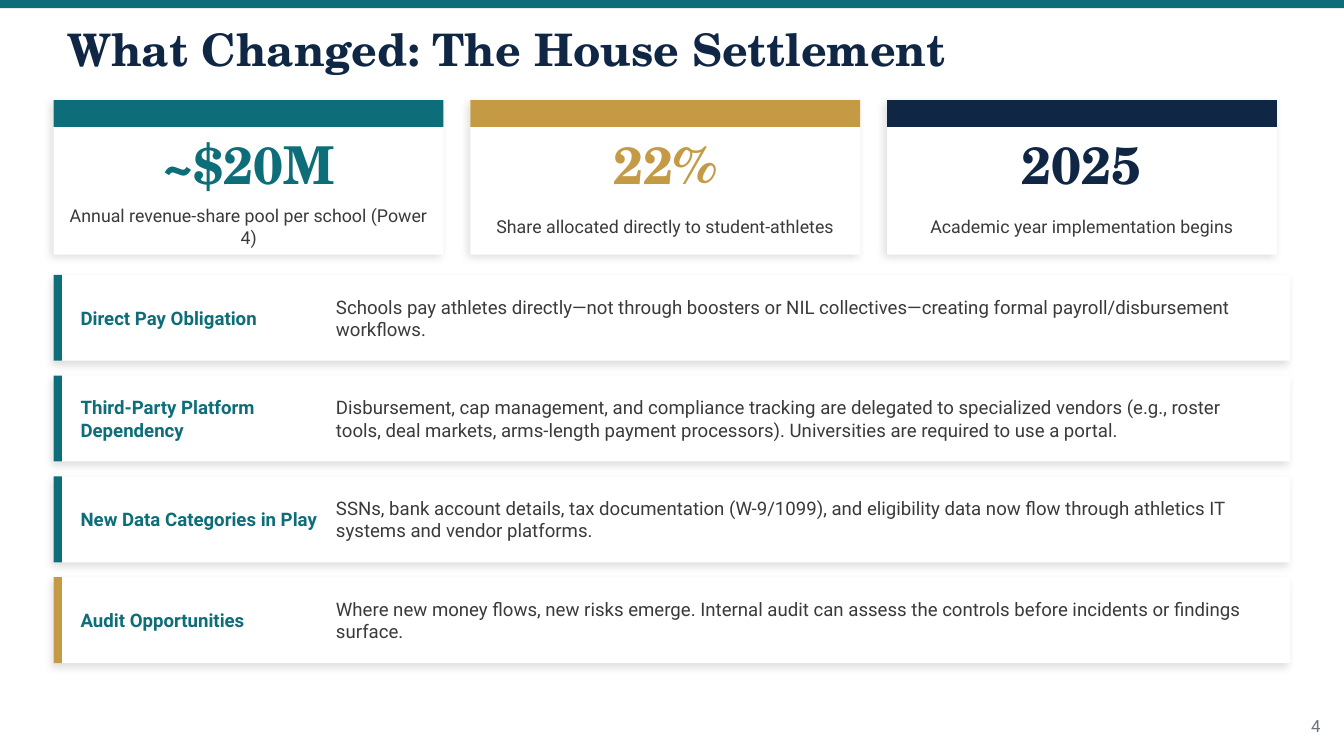
from pptx import Presentation
from pptx.dml.color import RGBColor
from pptx.enum.shapes import MSO_SHAPE
from pptx.enum.text import MSO_ANCHOR, PP_ALIGN
from pptx.oxml import parse_xml
from pptx.oxml.ns import nsdecls
from pptx.util import Inches, Pt

TEAL = RGBColor(0x0D, 0x6E, 0x7A)
GOLD = RGBColor(0xC4, 0x9A, 0x45)
NAVY = RGBColor(0x0F, 0x27, 0x44)
WHITE = RGBColor(0xFF, 0xFF, 0xFF)
INK = RGBColor(0x3A, 0x3A, 0x3A)
GRAY = RGBColor(0x6B, 0x72, 0x80)

WIDTH, HEIGHT = Inches(13.33), Inches(7.5)
UNIT = WIDTH / 100
LEFT = 4

SERIF, SANS = "TeX Gyre Schola", "Roboto"
TITLE = {"name": SERIF, "size": Pt(32), "bold": True}
FIGURE = {"name": SERIF, "size": Pt(37.3), "bold": True}
NOTE = {"name": SANS, "size": Pt(12.7)}
LABEL = {"name": SANS, "size": Pt(13.3), "bold": True}
BODY = {"name": SANS, "size": Pt(13.3)}
FOLIO = {"name": SANS, "size": Pt(12)}

SHADOW = (
    f'<a:effectLst {nsdecls("a")}>'
    '<a:outerShdw blurRad="76200" dist="38100" dir="8100000" algn="bl" rotWithShape="0">'
    '<a:srgbClr val="000000"><a:alpha val="12000"/></a:srgbClr>'
    '</a:outerShdw></a:effectLst>'
)

CARDS = [
    ("~$20M", "Annual revenue-share pool per school (Power 4)", TEAL),
    ("22%", "Share allocated directly to student-athletes", GOLD),
    ("2025", "Academic year implementation begins", NAVY),
]

POINTS = [
    ("Direct Pay Obligation",
     "Schools pay athletes directly—not through boosters or NIL collectives—creating "
     "formal payroll/disbursement workflows.", TEAL),
    ("Third-Party Platform Dependency",
     "Disbursement, cap management, and compliance tracking are delegated to specialized "
     "vendors (e.g., roster tools, deal markets, arms-length payment processors). "
     "Universities are required to use a portal.", TEAL),
    ("New Data Categories in Play",
     "SSNs, bank account details, tax documentation (W-9/1099), and eligibility data now "
     "flow through athletics IT systems and vendor platforms.", TEAL),
    ("Audit Opportunities",
     "Where new money flows, new risks emerge. Internal audit can assess the controls "
     "before incidents or findings surface.", GOLD),
]


def scale(*cells):
    return [round(cell * UNIT) for cell in cells]


def add_bar(slide, box, color):
    bar = slide.shapes.add_shape(MSO_SHAPE.RECTANGLE, *scale(*box))
    bar.shadow.inherit = False
    bar.fill.solid()
    bar.fill.fore_color.rgb = color
    bar.line.fill.background()
    return bar


def add_panel(slide, box):
    props = add_bar(slide, box, WHITE)._element.spPr
    props.remove(props.find("{*}effectLst"))
    props.append(parse_xml(SHADOW))


def add_text(slide, box, text, style, color, align=PP_ALIGN.LEFT, inset=(0, 0)):
    frame = slide.shapes.add_textbox(*scale(*box)).text_frame
    side, edge = scale(*inset)
    layout = {
        "word_wrap": True, "vertical_anchor": MSO_ANCHOR.MIDDLE,
        "margin_left": side, "margin_right": side,
        "margin_top": edge, "margin_bottom": edge,
    }
    for key, value in layout.items():
        setattr(frame, key, value)
    para = frame.paragraphs[0]
    para.alignment = align
    run = para.add_run()
    run.text = text
    for key, value in style.items():
        setattr(run.font, key, value)
    run.font.color.rgb = color


def add_card(slide, left, figure, note, color):
    top, width = 7.45, 29
    add_panel(slide, (left, top, width, 11.5))
    add_bar(slide, (left, top, width, 2), color)
    add_text(slide, (left, top + 2, width, 5.5), figure, FIGURE, color, PP_ALIGN.CENTER)
    add_text(slide, (left, top + 7.5, width, 3.8), note, NOTE, INK,
             PP_ALIGN.CENTER, (0.5, 0.5))


def add_point(slide, top, label, body, color):
    add_panel(slide, (LEFT, top, 92, 6.4))
    add_bar(slide, (LEFT, top, 0.6, 6.4), color)
    add_text(slide, (LEFT + 2, top + 0.8, 18.4, 4.8), label, LABEL, TEAL)
    add_text(slide, (LEFT + 21, top + 0.8, 69, 4.8), body, BODY, INK)


def main():
    deck = Presentation()
    deck.slide_width, deck.slide_height = WIDTH, HEIGHT
    slide = deck.slides.add_slide(deck.slide_layouts[6])
    add_bar(slide, (0, 0, 100, 0.6), TEAL)
    add_text(slide, (5, 1.4, 90, 4.5), "What Changed: The House Settlement", TITLE, NAVY)
    for col, card in enumerate(CARDS):
        add_card(slide, LEFT + 31 * col, *card)
    for row, point in enumerate(POINTS):
        add_point(slide, 20.45 + 7.5 * row, *point)
    add_text(slide, (95, 53, 4, 2), "4", FOLIO, GRAY, PP_ALIGN.RIGHT, (0.75, 0.38))
    deck.save("out.pptx")


if __name__ == "__main__":
    main()
